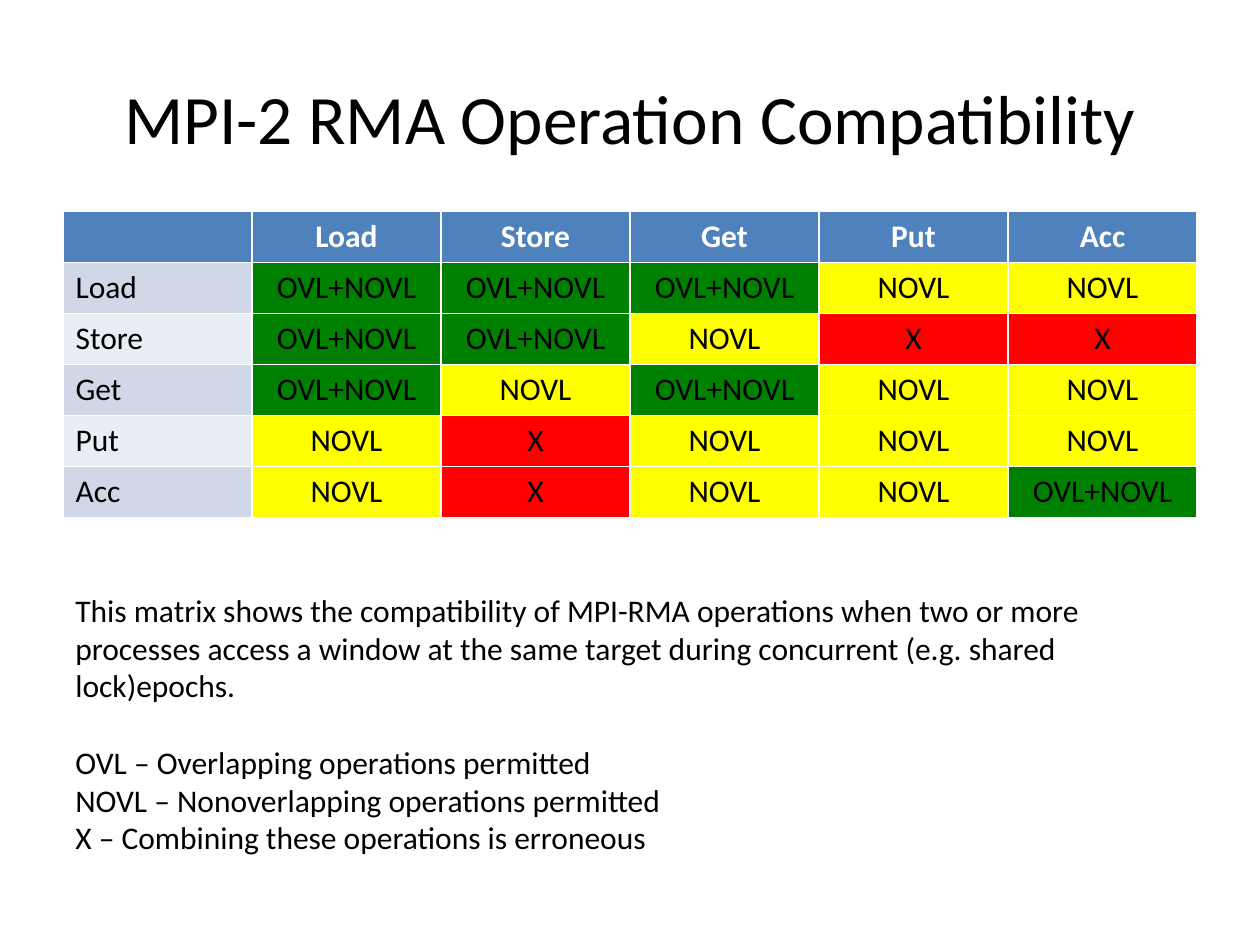
from pptx import Presentation
from pptx.dml.color import RGBColor
from pptx.enum.text import MSO_ANCHOR, PP_ALIGN
from pptx.util import Inches, Pt


def color(value):
    return RGBColor.from_string(value)


def add_text(paragraph, text, size=18, text_color="000000", bold=False):
    run = paragraph.add_run()
    run.text = text
    run.font.name = "Calibri"
    run.font.size = Pt(size)
    run.font.bold = bold
    run.font.color.rgb = color(text_color)


presentation = Presentation()
presentation.slide_width = Inches(10)
presentation.slide_height = Inches(7.5)
slide = presentation.slides.add_slide(presentation.slide_layouts[6])

title = slide.shapes.add_textbox(Inches(0.5), Inches(0.3), Inches(9), Inches(1.25))
title.text_frame.word_wrap = True
title.text_frame.vertical_anchor = MSO_ANCHOR.MIDDLE
paragraph = title.text_frame.paragraphs[0]
paragraph.alignment = PP_ALIGN.CENTER
add_text(paragraph, "MPI-2 RMA Operation Compatibility", 39.6)

operations = ["Load", "Store", "Get", "Put", "Acc"]
both, apart, error = "OVL+NOVL", "NOVL", "X"
compatibility = [
    [both, both, both, apart, apart],
    [both, both, apart, error, error],
    [both, apart, both, apart, apart],
    [apart, error, apart, apart, apart],
    [apart, error, apart, apart, both],
]
fills = {both: "008000", apart: "FFFF00", error: "FF0000"}
band_fills = ["D0D8E8", "E9EDF4"]

rows = [[""] + operations]
rows += [[name] + values for name, values in zip(operations, compatibility)]
table = slide.shapes.add_table(
    len(rows), len(rows[0]), Inches(0.5), Inches(1.68), Inches(9), Inches(2.43)
).table

for row_index, row in enumerate(rows):
    for column_index, text in enumerate(row):
        is_header = row_index == 0
        if is_header:
            fill = "4F81BD"
        elif column_index == 0:
            fill = band_fills[(row_index - 1) % 2]
        else:
            fill = fills[text]
        cell = table.cell(row_index, column_index)
        cell.fill.solid()
        cell.fill.fore_color.rgb = color(fill)
        paragraph = cell.text_frame.paragraphs[0]
        if column_index > 0:
            paragraph.alignment = PP_ALIGN.CENTER
        if text:
            add_text(paragraph, text, 18, "FFFFFF" if is_header else "000000", is_header)

explanation = (
    "This matrix shows the compatibility of MPI-RMA operations when two or more "
    "processes access a window at the same target during concurrent "
    "(e.g. shared lock)epochs."
)
legend = [
    "OVL – Overlapping operations permitted",
    "NOVL – Nonoverlapping operations permitted",
    "X – Combining these operations is erroneous",
]
notes = slide.shapes.add_textbox(Inches(0.5), Inches(4.64), Inches(9), Inches(2.22))
notes.text_frame.word_wrap = True
add_text(notes.text_frame.paragraphs[0], explanation)
notes.text_frame.paragraphs[0].space_after = Pt(22)
for entry in legend:
    add_text(notes.text_frame.add_paragraph(), entry)

presentation.save("out.pptx")
